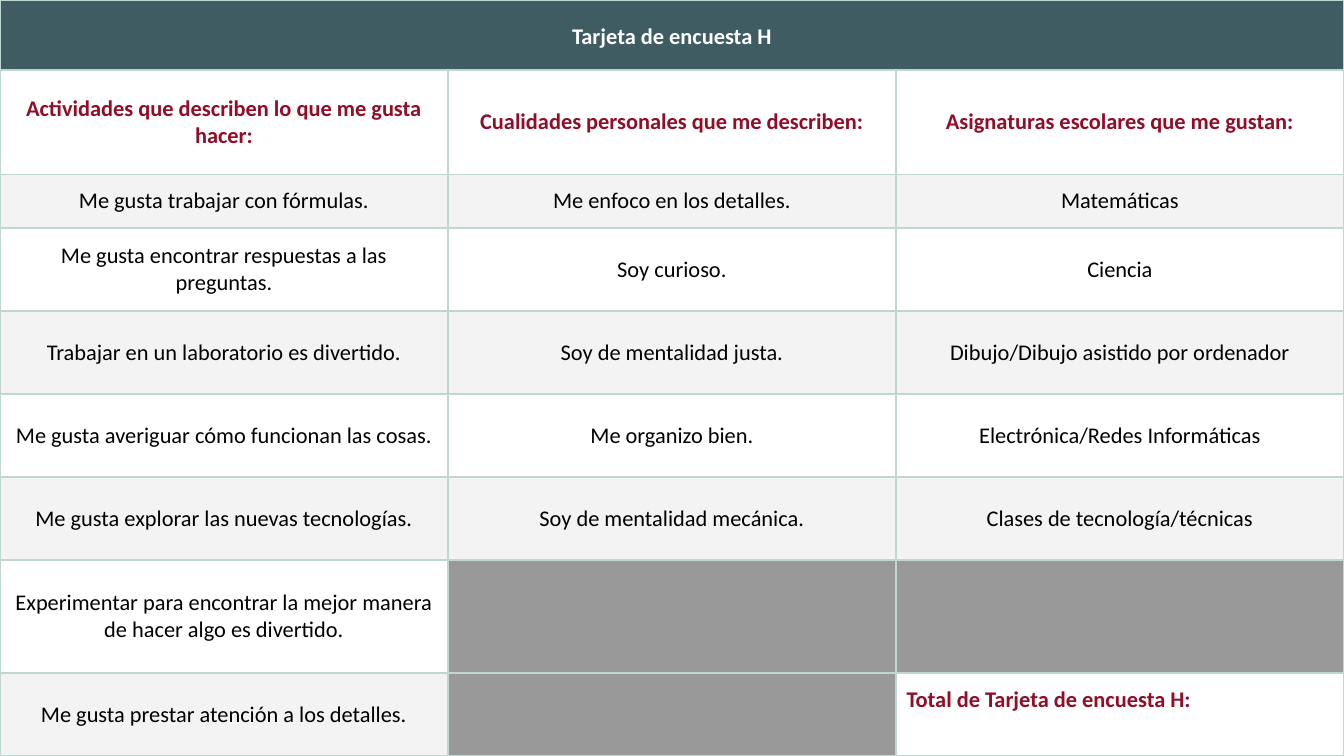
from lxml import etree
from pptx import Presentation
from pptx.dml.color import RGBColor
from pptx.enum.text import MSO_ANCHOR, PP_ALIGN
from pptx.oxml.ns import qn
from pptx.util import Cm, Pt

CENTER, LEFT = PP_ALIGN.CENTER, PP_ALIGN.LEFT
MIDDLE, TOP = MSO_ANCHOR.MIDDLE, MSO_ANCHOR.TOP

TEAL = RGBColor(0x3E, 0x5C, 0x61)
CRIMSON = RGBColor(0x91, 0x0D, 0x28)
WHITE = RGBColor(0xFF, 0xFF, 0xFF)
BLACK = RGBColor(0x00, 0x00, 0x00)
PALE_GREY = RGBColor(0xF3, 0xF3, 0xF3)
DARK_GREY = RGBColor(0x99, 0x99, 0x99)
MINT = RGBColor(0xBE, 0xD7, 0xD3)

# Content
TITLE = "Tarjeta de encuesta H"
HEADINGS = (
    "Actividades que describen lo que me gusta hacer:",
    "Cualidades personales que me describen:",
    "Asignaturas escolares que me gustan:",
)
ANSWERS = [
    ("Me gusta trabajar con fórmulas.", "Me enfoco en los detalles.", "Matemáticas"),
    ("Me gusta encontrar respuestas a las preguntas.", "Soy curioso.", "Ciencia"),
    ("Trabajar en un laboratorio es divertido.", "Soy de mentalidad justa.",
     "Dibujo/Dibujo asistido por ordenador"),
    ("Me gusta averiguar cómo funcionan las cosas.", "Me organizo bien.",
     "Electrónica/Redes Informáticas"),
    ("Me gusta explorar las nuevas tecnologías.", "Soy de mentalidad mecánica.",
     "Clases de tecnología/técnicas"),
    ("Experimentar para encontrar la mejor manera de hacer algo es divertido.", "", ""),
    ("Me gusta prestar atención a los detalles.", "", ""),
]
TOTAL = "Total de Tarjeta de encuesta H:"

# Sizes in centimetres
PAGE_WIDTH, PAGE_HEIGHT = 25.4, 14.29
ROW_HEIGHTS = [1.32, 1.98, 1.01, 1.57, 1.57, 1.57, 1.57, 2.13, 1.57]
MARGIN = 0.2


def add_borders(cell):
    """Draw a thin mint line on all four sides; lines precede the fill in tcPr."""
    properties = cell._tc.get_or_add_tcPr()
    for index, side in enumerate(("a:lnL", "a:lnR", "a:lnT", "a:lnB")):
        line = etree.Element(qn(side), w=str(Pt(1)))
        fill = etree.SubElement(line, qn("a:solidFill"))
        etree.SubElement(fill, qn("a:srgbClr"), val=str(MINT))
        properties.insert(index, line)


def fill_cell(cell, text, fill, color=BLACK, bold=False, align=CENTER, anchor=MIDDLE):
    cell.fill.solid()
    cell.fill.fore_color.rgb = fill
    cell.margin_left = cell.margin_right = Cm(MARGIN)
    cell.margin_top = cell.margin_bottom = Cm(MARGIN)
    cell.vertical_anchor = anchor
    para = cell.text_frame.paragraphs[0]
    para.text = text
    para.alignment = align
    para.font.size = Pt(12)
    for span in para.runs:
        span.font.name = "Calibri"
        span.font.size = Pt(12)
        span.font.bold = bold
        span.font.color.rgb = color
    add_borders(cell)


deck = Presentation()
deck.slide_width, deck.slide_height = Cm(PAGE_WIDTH), Cm(PAGE_HEIGHT)
page = deck.slides.add_slide(deck.slide_layouts[6])

# Table grid
table = page.shapes.add_table(
    len(ROW_HEIGHTS), len(HEADINGS), 0, 0, Cm(PAGE_WIDTH), Cm(PAGE_HEIGHT)
).table
table.first_row = table.horz_banding = False
for row, height in zip(table.rows, ROW_HEIGHTS):
    row.height = Cm(height)

# Title row
title_cell = table.cell(0, 0)
title_cell.merge(table.cell(0, len(HEADINGS) - 1))
for column in range(len(HEADINGS)):
    fill_cell(table.cell(0, column), "" if column else TITLE, TEAL, WHITE, bold=True)
title_para = title_cell.text_frame.paragraphs[0]
title_para.line_spacing = 1.15
title_para.space_after = Pt(6)

# Column headings
for column, heading in enumerate(HEADINGS):
    fill_cell(table.cell(1, column), heading, WHITE, CRIMSON, bold=True)
    table.cell(1, column).text_frame.paragraphs[0].space_before = Pt(10)

# Answers in alternating bands, unused cells greyed out, total in the last cell
last_cell = (len(ANSWERS) - 1, len(HEADINGS) - 1)
for index, answers in enumerate(ANSWERS):
    band = WHITE if index % 2 else PALE_GREY
    for column, answer in enumerate(answers):
        cell = table.cell(index + 2, column)
        if (index, column) == last_cell:
            fill_cell(cell, TOTAL, WHITE, CRIMSON, bold=True, align=LEFT, anchor=TOP)
            cell.margin_top = Cm(0.25)
        else:
            fill_cell(cell, answer, band if answer else DARK_GREY)

deck.save("out.pptx")
